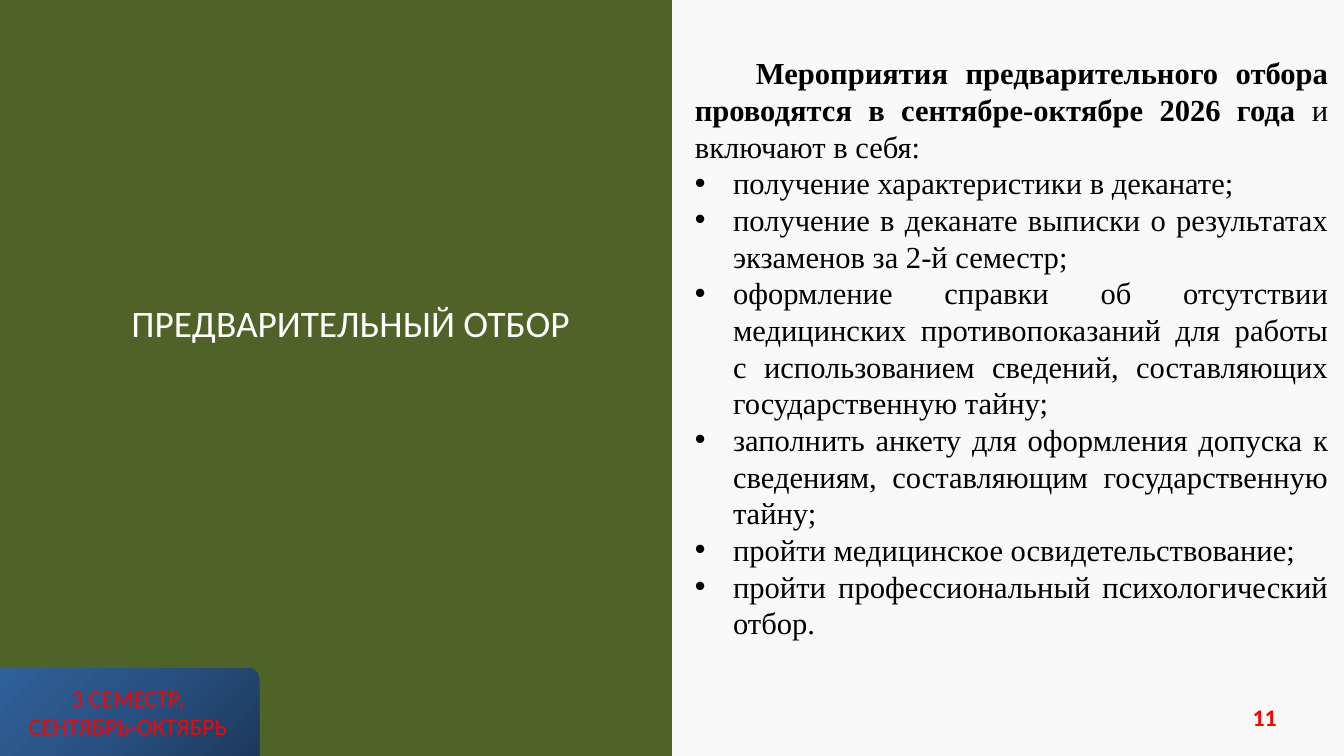
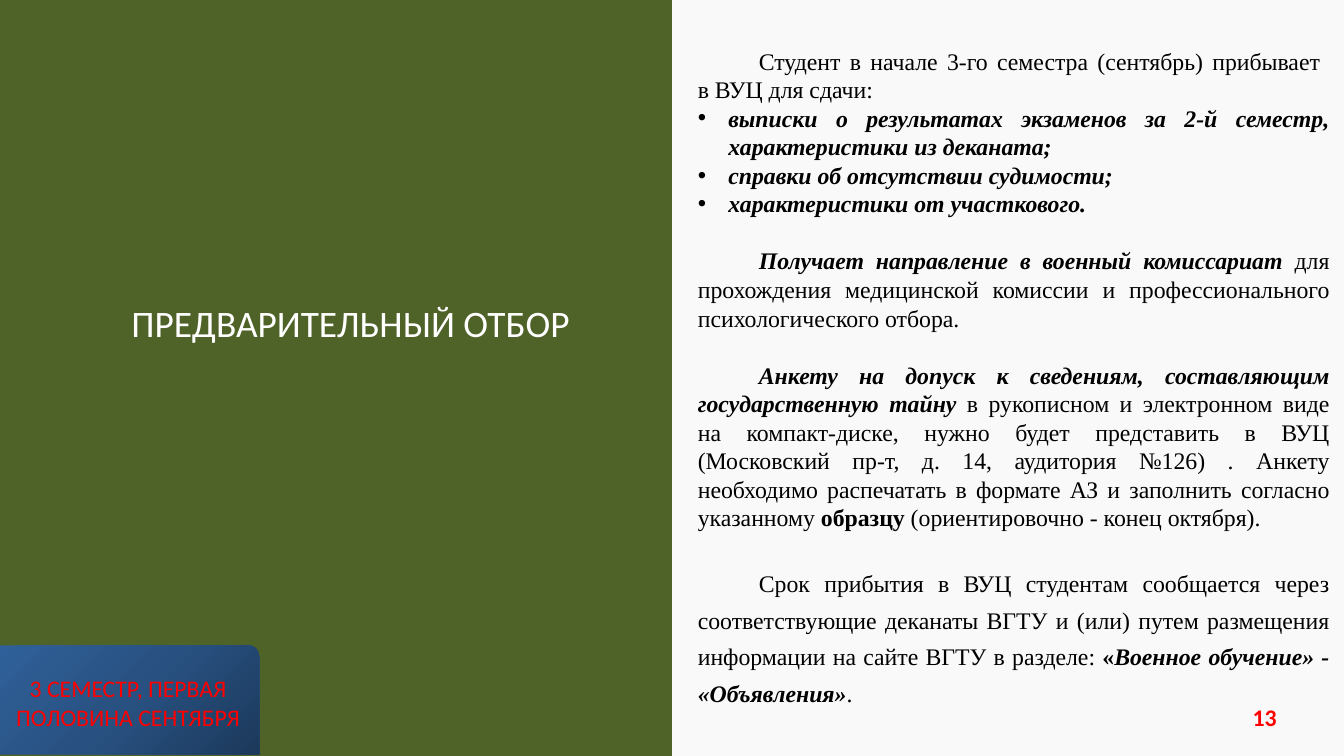
from lxml import etree
from pptx import Presentation
from pptx.dml.color import RGBColor
from pptx.enum import shapes, text
from pptx.oxml import ns, parse_xml
from pptx.util import Pt

# Shared look
WIDTH, HEIGHT = 1583.28, 890.64
PANEL_WIDTH = WIDTH / 2
TAG_WIDTH, TAG_RADIUS = 305.3, 13
GREEN, PAPER, WHITE, BLACK, RED = "4F6228", "F9F9F9", "FFFFFF", "000000", "FF0000"
TAG_STOPS = [(0, "1C395B"), (50, "285181"), (100, "306099")]
SANS, SERIF = "Calibri", "Times New Roman"
LEFT, CENTER, RIGHT, JUSTIFY = (text.PP_ALIGN.LEFT, text.PP_ALIGN.CENTER,
                                text.PP_ALIGN.RIGHT, text.PP_ALIGN.JUSTIFY)
FIRST_LINE = 72
TITLE = "ПРЕДВАРИТЕЛЬНЫЙ ОТБОР"


# Content: runs are (text, style), where style holds b for bold and i for italic
def item(words, style=""):
    return {"runs": [(words, style)], "bullet": True}


SLIDES = [
    {
        "number": "11",
        "tag": {"words": "3 СЕМЕСТР, СЕНТЯБРЬ-ОКТЯБРЬ",
                "top": 787.2, "height": 103.2, "insets": (28, 18, 28, 0)},
        "body": {"box": (811.5, 60.5, 760.3, 760), "size": 36, "hang": 45},
        "paragraphs": [
            {"runs": [("Мероприятия предварительного отбора проводятся "
                       "в сентябре-октябре 2026 года ", "b"),
                      ("и включают в себя:", "")]},
            item("получение характеристики в деканате;"),
            item("получение в деканате выписки о результатах экзаменов за 2-й семестр;"),
            item("оформление справки об отсутствии медицинских противопоказаний для работы "
                 "с использованием сведений, составляющих государственную тайну;"),
            item("заполнить анкету для оформления допуска к сведениям, "
                 "составляющим государственную тайну;"),
            item("пройти медицинское освидетельствование;"),
            item("пройти профессиональный психологический отбор."),
        ],
    },
    {
        "number": "13",
        "tag": {"words": "3 СЕМЕСТР, ПЕРВАЯ ПОЛОВИНА СЕНТЯБРЯ",
                "top": 760.3, "height": 128.2, "insets": (0, 34, 0, 0)},
        "body": {"box": (815, 51.1, 758.2, 788.4), "size": 28, "hang": 36},
        "paragraphs": [
            {"runs": [("Студент в начале 3-го семестра (сентябрь) прибывает \n"
                       "в ВУЦ для сдачи:", "")]},
            item("выписки о результатах экзаменов за 2-й семестр, "
                 "характеристики из деканата;", "bi"),
            item("справки об отсутствии судимости;", "bi"),
            item("характеристики от участкового.", "bi"),
            {"before": 33.7,
             "runs": [("Получает направление в военный комиссариат ", "bi"),
                      ("для прохождения медицинской комиссии и профессионального "
                       "психологического отбора.", "")]},
            {"before": 33.7,
             "runs": [("Анкету на допуск к сведениям, составляющим "
                       "государственную тайну ", "bi"),
                      ("в рукописном и электронном виде на компакт-диске, нужно будет "
                       "представить в ВУЦ (Московский пр-т, д. 14, аудитория №126) . "
                       "Анкету необходимо распечатать в формате АЗ и заполнить "
                       "согласно указанному ", ""),
                      ("образцу", "b"),
                      (" (ориентировочно - конец октября).", "")]},
            {"before": 33.7, "spacing": 1.29,
             "runs": [("Срок прибытия в ВУЦ студентам сообщается через соответствующие "
                       "деканаты ВГТУ и (или) путем размещения информации на сайте ВГТУ "
                       "в разделе: ", ""),
                      ("«", "b"),
                      ("Военное обучение» - «Объявления»", "bi"),
                      (".", "")]},
        ],
    },
]


def color(value):
    return RGBColor.from_string(value)


def setup_frame(frame, insets=(7.2, 3.6, 7.2, 3.6), anchor=text.MSO_ANCHOR.TOP):
    frame.word_wrap = True
    frame.auto_size = text.MSO_AUTO_SIZE.NONE
    frame.vertical_anchor = anchor
    (frame.margin_left, frame.margin_top,
     frame.margin_right, frame.margin_bottom) = map(Pt, insets)
    return frame


def write(paragraph, runs, size, font=SANS, ink=BLACK, align=LEFT,
          left=0, first=0, bullet=False, before=0, spacing=None):
    """Fill a paragraph with a string or a list of (text, style) runs."""
    properties = paragraph._p.get_or_add_pPr()
    properties.set("marL", str(Pt(left)))
    properties.set("indent", str(Pt(first)))
    if bullet:
        etree.SubElement(properties, ns.qn("a:buFont")).set("typeface", "Arial")
        etree.SubElement(properties, ns.qn("a:buChar")).set("char", "•")
    paragraph.alignment = align
    paragraph.space_before = Pt(before)
    if spacing:
        paragraph.line_spacing = spacing
    for words, style in [(runs, "")] if isinstance(runs, str) else runs:
        for index, line in enumerate(words.split("\n")):
            if index:
                paragraph.add_line_break()
            run = paragraph.add_run()
            run.text = line
            run.font.name, run.font.size = font, Pt(size)
            run.font.bold, run.font.italic = "b" in style, "i" in style
            run.font.color.rgb = color(ink)


def add_block(slide, kind, *box):
    block = slide.shapes.add_shape(kind, *map(Pt, box))
    block.shadow.inherit = False
    block.line.fill.background()
    return block


def add_text_box(slide, box, **frame_format):
    return setup_frame(slide.shapes.add_textbox(*map(Pt, box)).text_frame, **frame_format)


def add_panel(slide):
    slide.background.fill.solid()
    slide.background.fill.fore_color.rgb = color(PAPER)
    panel = add_block(slide, shapes.MSO_SHAPE.RECTANGLE, 0, 0, PANEL_WIDTH, HEIGHT)
    panel.fill.solid()
    panel.fill.fore_color.rgb = color(GREEN)


def add_title(slide):
    title = slide.shapes.title
    title.left, title.top, title.width, title.height = map(Pt, (97.2, 350, 596.2, 60.5))
    # The title goes in front of the panel
    title.element.getparent().append(title.element)
    frame = setup_frame(title.text_frame, anchor=text.MSO_ANCHOR.MIDDLE)
    write(frame.paragraphs[0], TITLE, 44, ink=WHITE, align=CENTER, left=36)


def add_tag(slide, words, top, height, insets):
    tag = add_block(slide, shapes.MSO_SHAPE.ROUND_1_RECTANGLE, 0, top, TAG_WIDTH, height)
    tag.adjustments[0] = TAG_RADIUS / height
    stops = "".join(f'<a:gs pos="{at * 1000}"><a:srgbClr val="{value}"/></a:gs>'
                    for at, value in TAG_STOPS)
    gradient = parse_xml(
        f'<a:gradFill {ns.nsdecls("a")} rotWithShape="1"><a:gsLst>{stops}</a:gsLst>'
        '<a:path path="circle"><a:fillToRect l="100000" t="100000"/></a:path></a:gradFill>')
    tag.element.spPr.find(ns.qn("a:prstGeom")).addnext(gradient)
    frame = setup_frame(tag.text_frame, insets=insets)
    write(frame.paragraphs[0], words, 28, ink=RED, align=CENTER)


def add_body(slide, paragraphs, box, size, hang):
    frame = add_text_box(slide, box)
    for index, content in enumerate(paragraphs):
        paragraph = frame.add_paragraph() if index else frame.paragraphs[0]
        indents = (hang, -hang) if content.get("bullet") else (0, FIRST_LINE)
        write(paragraph, size=size, font=SERIF, align=JUSTIFY,
              left=indents[0], first=indents[1], **content)


def add_number(slide, number):
    frame = add_text_box(slide, (1139.8, 828, 364.3, 33.8), insets=(0, 0, 0, 0))
    write(frame.paragraphs[0], [(number, "b")], 28, ink=RED, align=RIGHT)


def main():
    deck = Presentation()
    deck.slide_width, deck.slide_height = Pt(WIDTH), Pt(HEIGHT)
    for content in SLIDES:
        slide = deck.slides.add_slide(deck.slide_layouts[5])
        add_panel(slide)
        add_title(slide)
        add_tag(slide, **content["tag"])
        add_body(slide, content["paragraphs"], **content["body"])
        add_number(slide, content["number"])
    deck.save("out.pptx")


if __name__ == "__main__":
    main()
